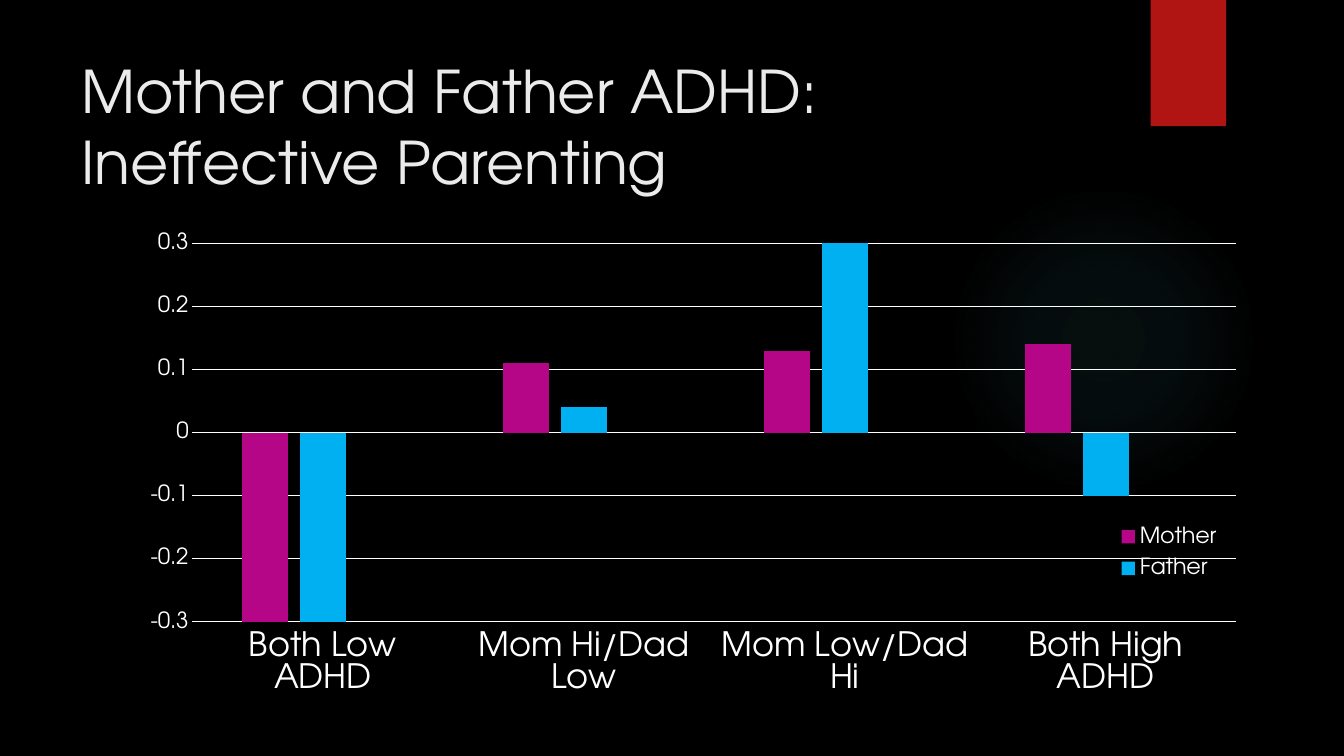
from lxml import etree
from pptx import Presentation
from pptx.chart.data import CategoryChartData
from pptx.dml.color import RGBColor
from pptx.enum.chart import XL_CHART_TYPE, XL_LEGEND_POSITION, XL_TICK_LABEL_POSITION, XL_TICK_MARK
from pptx.enum.shapes import MSO_SHAPE
from pptx.enum.text import MSO_ANCHOR, MSO_AUTO_SIZE, PP_ALIGN
from pptx.oxml import parse_xml
from pptx.oxml.ns import nsdecls, qn
from pptx.util import Cm, Pt

CLUSTERED = XL_CHART_TYPE.COLUMN_CLUSTERED
LEGEND_RIGHT = XL_LEGEND_POSITION.RIGHT
LABELS_LOW = XL_TICK_LABEL_POSITION.LOW
NO_TICK = XL_TICK_MARK.NONE
RECTANGLE, OVAL = MSO_SHAPE.RECTANGLE, MSO_SHAPE.OVAL
MIDDLE, LEFT = MSO_ANCHOR.MIDDLE, PP_ALIGN.LEFT
NO_AUTOFIT = MSO_AUTO_SIZE.NONE

FONT = "TeX Gyre Adventor"
COLORS = {
    "background": "000000", "title": "EBEBEB", "text": "FFFFFF", "ribbon": "B01513",
    "glow": "50B9C1", "Mother": "B60688", "Father": "00B0F0", "Series 3": "E6B729",
}
GLOW_STOPS = [(0, 7), (36, 6), (69, 0)]
CATEGORIES = ["Both Low ADHD", "Mom Hi/Dad Low", "Mom Low/Dad Hi", "Both High ADHD"]
SERIES = {
    "Mother": [-0.49, 0.11, 0.13, 0.14],
    "Father": [-0.39, 0.04, 0.32, -0.1],
    "Series 3": [None] * 4,
}
GRID_STEP = 0.1
STEPS_EACH_WAY = 3


def color(name):
    """Return the named palette colour."""
    return RGBColor.from_string(COLORS[name])


def format_font(font, size, color_name):
    """Apply the slide typeface with a size and colour."""
    font.name = FONT
    font.size = Pt(size)
    font.bold = False
    font.color.rgb = color(color_name)


def set_text(shape, text, size=16, color_name="text", align=LEFT, anchor=MIDDLE):
    """Write formatted text into a shape."""
    frame = shape.text_frame
    frame.word_wrap = True
    frame.auto_size = NO_AUTOFIT
    frame.vertical_anchor = anchor
    frame.text = text
    paragraph = frame.paragraphs[0]
    paragraph.alignment = align
    for run in paragraph.runs:
        format_font(run.font, size, color_name)


def place(shape, left, top, width, height):
    """Position a shape in centimetres."""
    shape.left, shape.top, shape.width, shape.height = map(Cm, (left, top, width, height))


def add_plain_shape(slide, kind, box, color_name):
    """Add a solid shape without outline or shadow."""
    shape = slide.shapes.add_shape(kind, *map(Cm, box))
    shape.shadow.inherit = False
    shape.line.fill.background()
    shape.fill.solid()
    shape.fill.fore_color.rgb = color(color_name)
    return shape


def add_glow(slide, box):
    """Add a circle that fades out from its centre."""
    glow = add_plain_shape(slide, OVAL, box, "glow")
    stops = "".join(
        f'<a:gs pos="{position * 1000}"><a:srgbClr val="{COLORS["glow"]}">'
        f'<a:alpha val="{opacity * 1000}"/></a:srgbClr></a:gs>'
        for position, opacity in GLOW_STOPS
    )
    gradient = parse_xml(
        f'<a:gradFill {nsdecls("a")} rotWithShape="1"><a:gsLst>{stops}</a:gsLst>'
        '<a:path path="circle"><a:fillToRect l="50000" t="50000" r="50000" b="50000"/></a:path>'
        '</a:gradFill>'
    )
    properties = glow.element.spPr
    properties.replace(properties.find(qn("a:solidFill")), gradient)


def set_layout(parent, index, inner=False, **fractions):
    """Give a chart part a manual layout in fractions of the chart."""
    for existing in parent.findall(qn("c:layout")):
        parent.remove(existing)
    layout = etree.Element(qn("c:layout"))
    manual = etree.SubElement(layout, qn("c:manualLayout"))
    settings = {"layoutTarget": "inner"} if inner else {}
    settings.update(xMode="edge", yMode="edge", **fractions)
    for tag, value in settings.items():
        etree.SubElement(manual, qn(f"c:{tag}")).set("val", str(value))
    parent.insert(index, layout)


def format_axis(axis, size):
    """Format the labels of an axis and hide its tick marks."""
    axis.major_tick_mark = axis.minor_tick_mark = NO_TICK
    format_font(axis.tick_labels.font, size, "text")


def format_line(line):
    """Draw a thin light line."""
    line.color.rgb = color("text")
    line.width = Pt(0.75)


def format_legend(chart, hidden_index):
    """Place the legend over the plot and hide one entry."""
    chart.has_legend = True
    legend = chart.legend
    legend.position = LEGEND_RIGHT
    legend.include_in_layout = False
    format_font(legend.font, 16, "text")
    element = chart.element.find(f".//{qn('c:legend')}")
    set_layout(element, 1, x=0.89, y=0.61, w=0.1, h=0.16)
    entry = etree.Element(qn("c:legendEntry"))
    etree.SubElement(entry, qn("c:idx")).set("val", str(hidden_index))
    etree.SubElement(entry, qn("c:delete")).set("val", "1")
    element.insert(1, entry)


def add_parenting_chart(slide, box):
    """Add the clustered columns for mothers and fathers."""
    data = CategoryChartData()
    data.categories = CATEGORIES
    for name, values in SERIES.items():
        data.add_series(name, values)
    chart = slide.shapes.add_chart(CLUSTERED, *map(Cm, box), data).chart
    chart.has_title = False
    format_font(chart.font, 16, "text")

    plot = chart.plots[0]
    plot.gap_width, plot.overlap = 219, -27
    plot.vary_by_categories = False
    for series in plot.series:
        series.invert_if_negative = False
        series.format.fill.solid()
        series.format.fill.fore_color.rgb = color(series.name)

    category_axis, value_axis = chart.category_axis, chart.value_axis
    format_axis(category_axis, 24)
    category_axis.tick_label_position = LABELS_LOW
    format_line(category_axis.format.line)
    format_axis(value_axis, 16)
    value_axis.maximum_scale = STEPS_EACH_WAY * GRID_STEP
    value_axis.minimum_scale = -STEPS_EACH_WAY * GRID_STEP
    value_axis.major_unit = GRID_STEP
    value_axis.format.line.fill.background()
    format_line(value_axis.major_gridlines.format.line)

    plot_area = chart.element.find(f".//{qn('c:plotArea')}")
    set_layout(plot_area, 0, inner=True, x=0.07, y=0.02, w=0.93, h=0.82)
    format_legend(chart, hidden_index=2)


def main():
    """Build the slide and save it."""
    presentation = Presentation()
    presentation.slide_width, presentation.slide_height = Cm(33.87), Cm(19.05)
    slide = presentation.slides.add_slide(presentation.slide_layouts[5])
    slide.background.fill.solid()
    slide.background.fill.fore_color.rgb = color("background")
    add_glow(slide, (23.9, 4.65, 7.82, 7.82))
    add_plain_shape(slide, RECTANGLE, (29, 0, 1.9, 3.18), "ribbon")
    title = slide.shapes.title
    place(title, 1.8, 1.22, 26.14, 3.89)
    set_text(title, "Mother and Father ADHD:\vIneffective Parenting", size=42, color_name="title")
    add_parenting_chart(slide, (2.87, 5.87, 28.3, 11.66))
    presentation.save("out.pptx")


if __name__ == "__main__":
    main()
